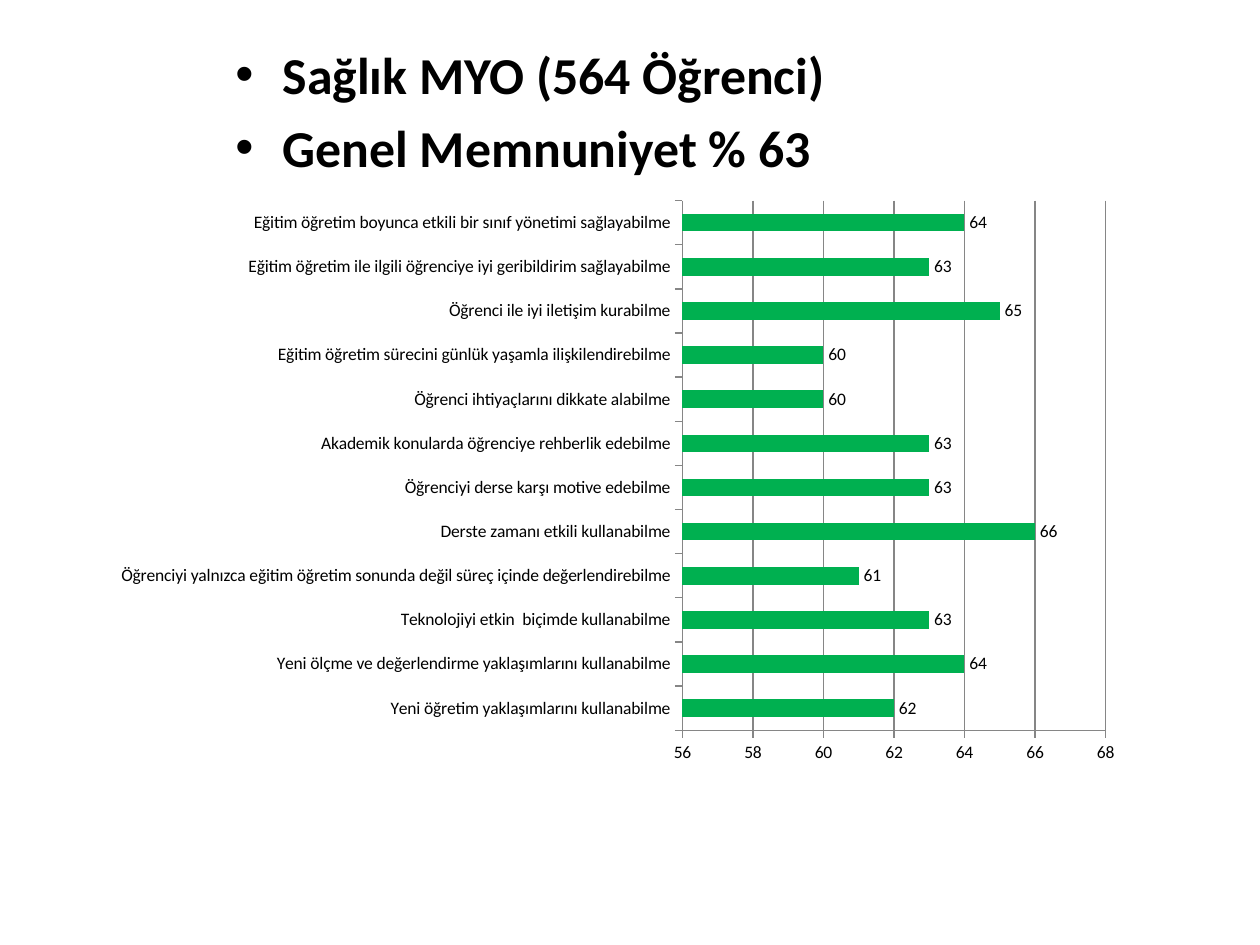
import pptx
import pptx.chart.data
import pptx.dml.color
import pptx.enum.chart
import pptx.enum.text
import pptx.oxml
import pptx.oxml.ns
import pptx.util
from dataclasses import dataclass

Pt = pptx.util.Pt
RGB = pptx.dml.color.RGBColor.from_string
Kinds = pptx.enum.chart

heads = ["Sağlık MYO (564 Öğrenci)", "Genel Memnuniyet % 63"]
scores = [
    ("Yeni öğretim yaklaşımlarını kullanabilme", 62),
    ("Yeni ölçme ve değerlendirme yaklaşımlarını kullanabilme", 64),
    ("Teknolojiyi etkin  biçimde kullanabilme", 63),
    ("Öğrenciyi yalnızca eğitim öğretim sonunda değil süreç içinde değerlendirebilme", 61),
    ("Derste zamanı etkili kullanabilme", 66),
    ("Öğrenciyi derse karşı motive edebilme", 63),
    ("Akademik konularda öğrenciye rehberlik edebilme", 63),
    ("Öğrenci ihtiyaçlarını dikkate alabilme", 60),
    ("Eğitim öğretim sürecini günlük yaşamla ilişkilendirebilme", 60),
    ("Öğrenci ile iyi iletişim kurabilme", 65),
    ("Eğitim öğretim ile ilgili öğrenciye iyi geribildirim sağlayabilme", 63),
    ("Eğitim öğretim boyunca etkili bir sınıf yönetimi sağlayabilme", 64),
]
plot_box = {"x": 0.56, "y": 0.02, "w": 0.41, "h": 0.91}


@dataclass
class Theme:
    font: str = "Calibri"
    ink: str = "000000"
    bar: str = "00B050"
    rule: str = "868686"
    head: float = 29.6
    label: float = 10
    line: float = 0.75
    indent: float = 27


theme = Theme()


def style(font, size, bold=False):
    font.name = theme.font
    font.size = Pt(size)
    font.bold = bold
    font.color.rgb = RGB(theme.ink)


def draw(line):
    line.color.rgb = RGB(theme.rule)
    line.width = Pt(theme.line)


def add_heads(slide):
    box = slide.shapes.add_textbox(Pt(127.4), Pt(20.9), Pt(470.9), Pt(85))
    frame = box.text_frame
    frame.word_wrap = True
    for i, text in enumerate(heads):
        para = frame.paragraphs[0] if i == 0 else frame.add_paragraph()
        para.alignment = pptx.enum.text.PP_ALIGN.LEFT
        para.space_before = Pt(0.2 * theme.head)
        props = para._p.get_or_add_pPr()
        props.set("marL", str(Pt(theme.indent)))
        props.set("indent", str(-Pt(theme.indent)))
        for tag, key, value in (("buFont", "typeface", "Arial"), ("buChar", "char", "•")):
            item = pptx.oxml.parse_xml(f'<a:{tag} {pptx.oxml.ns.nsdecls("a")} {key}="{value}"/>')
            props.append(item)
        run = para.add_run()
        run.text = text
        style(run.font, theme.head, True)


def place_plot(chart):
    area = chart._chartSpace.chart.plotArea
    for old in area.findall(pptx.oxml.ns.qn("c:layout")):
        area.remove(old)
    modes = '<c:layoutTarget val="inner"/><c:xMode val="edge"/><c:yMode val="edge"/>'
    sides = "".join(f'<c:{key} val="{value}"/>' for key, value in plot_box.items())
    area.insert(0, pptx.oxml.parse_xml(
        f'<c:layout {pptx.oxml.ns.nsdecls("c")}><c:manualLayout>{modes}{sides}</c:manualLayout></c:layout>'))


def add_scores(slide):
    data = pptx.chart.data.CategoryChartData(number_format="0")
    data.categories = [name for name, score in scores]
    data.add_series("Series 1", [score for name, score in scores])
    chart = slide.shapes.add_chart(
        Kinds.XL_CHART_TYPE.BAR_CLUSTERED, Pt(59.8), Pt(108), Pt(589.7), Pt(332.6), data).chart
    chart.has_legend = False
    chart.has_title = False
    style(chart.font, theme.label)

    plot = chart.plots[0]
    plot.gap_width = 150
    plot.vary_by_categories = False
    fill = plot.series[0].format.fill
    fill.solid()
    fill.fore_color.rgb = RGB(theme.bar)
    plot.has_data_labels = True
    labels = plot.data_labels
    labels.show_value = True
    labels.number_format = "0"
    labels.number_format_is_linked = False
    labels.position = Kinds.XL_LABEL_POSITION.OUTSIDE_END
    style(labels.font, theme.label)

    for axis in (chart.category_axis, chart.value_axis):
        axis.major_tick_mark = Kinds.XL_TICK_MARK.OUTSIDE
        axis.minor_tick_mark = Kinds.XL_TICK_MARK.NONE
        draw(axis.format.line)
        style(axis.tick_labels.font, theme.label)
    chart.category_axis.has_major_gridlines = False
    scale = chart.value_axis
    scale.minimum_scale, scale.maximum_scale, scale.major_unit = 56, 68, 2
    scale.has_major_gridlines = True
    draw(scale.major_gridlines.format.line)
    scale.tick_labels.number_format = "0"
    scale.tick_labels.number_format_is_linked = False
    place_plot(chart)


def main():
    deck = pptx.Presentation()
    deck.slide_width, deck.slide_height = Pt(720), Pt(540)
    slide = deck.slides.add_slide(deck.slide_layouts[6])
    add_heads(slide)
    add_scores(slide)
    deck.save("out.pptx")


if __name__ == "__main__":
    main()
